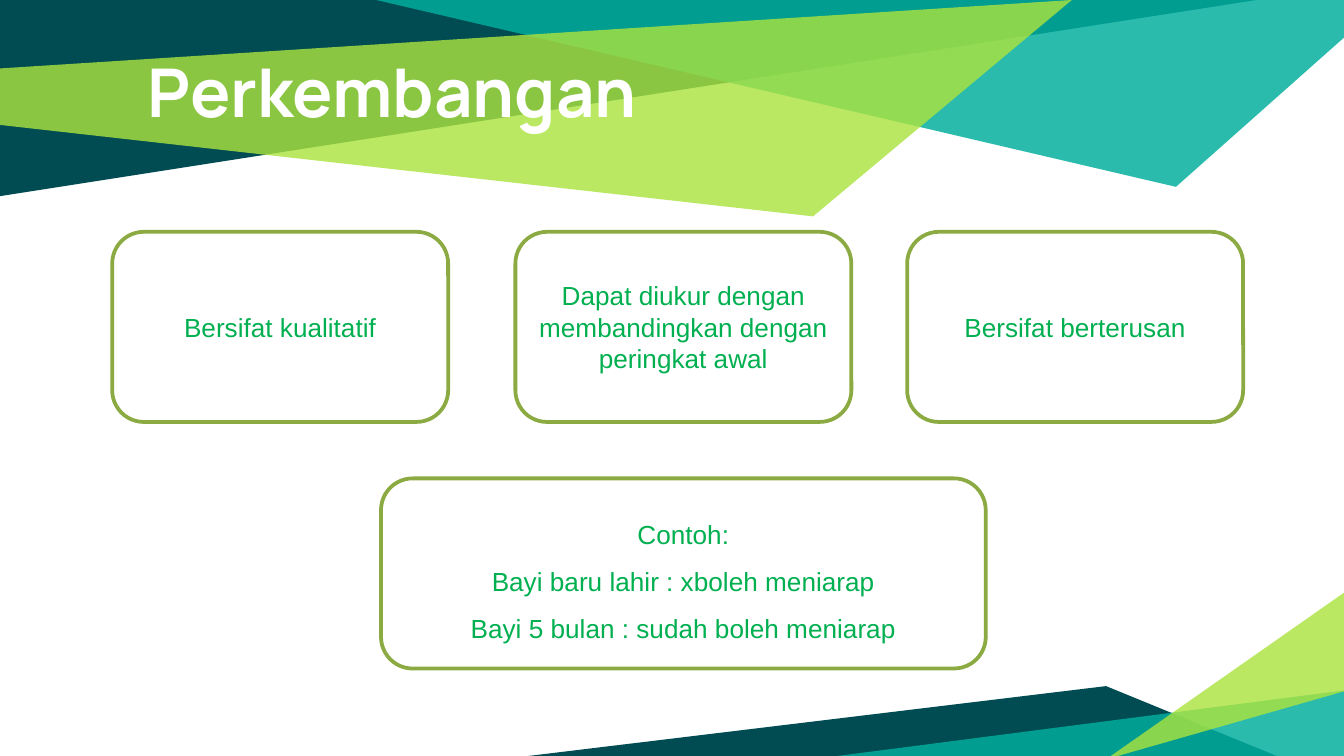
import pptx
import pptx.dml.color
import pptx.enum.shapes
import pptx.enum.text
import pptx.oxml
import pptx.oxml.ns
import pptx.util

PX = 4572  # EMU per px, 200 px to the inch
WIDTH, HEIGHT = 2000, 1125

DARK, TEAL, LIME = "004C52", "00AE9D", "ABE33F"
WHITE, OLIVE, GREEN = "FFFFFF", "8BAB42", "00B050"

BANDS = [
    (DARK, 100, [(0, 0), (0, 292), (1870, 0)]),
    (TEAL, 83, [(560, 0), (1750, 278), (2000, 56), (2000, 0)]),
    (LIME, 81, [(-2, 102), (0, 186), (1210, 322), (1595, 0)]),
    (DARK, 100, [(786, 1125), (1900, 1125), (1646, 1021)]),
    (TEAL, 83, [(2004, 1027), (2004, 1130), (1208, 1130)]),
    (LIME, 81, [(2003, 1028), (2003, 880), (1646, 1130)]),
]

TRAIT_WIDTH, CARD_HEIGHT = 500, 283
TRAITS = [
    (167, "Bersifat kualitatif"),
    (767, "Dapat diukur dengan membandingkan dengan peringkat awal"),
    (1350, "Bersifat berterusan"),
]
EXAMPLE = "Contoh:\nBayi baru lahir : xboleh meniarap\nBayi 5 bulan : sudah boleh meniarap"


def rgb(color):
    return pptx.dml.color.RGBColor.from_string(color)


def emu(*lengths):
    return [pptx.util.Emu(length * PX) for length in lengths]


class SlideBuilder:
    """Holds the slide and its style, and adds each kind of element."""

    heading_font, body_font = "Manrope", "Arial"
    heading_size, body_size = 36, 14

    def __init__(self, slide):
        self.slide = slide

    def format_runs(self, paragraph, font_name, size, color, bold=False):
        for run in paragraph.runs:
            run.font.name = font_name
            run.font.size = pptx.util.Pt(size)
            run.font.bold = bold
            run.font.color.rgb = rgb(color)

    def band(self, color, opacity, corners):
        """Add a flat polygon; opacity is in percent."""
        outline = self.slide.shapes.build_freeform(*corners[0], scale=PX)
        outline.add_line_segments(corners[1:], close=True)
        band = outline.convert_to_shape()
        band.shadow.inherit = False
        band.line.fill.background()
        band.fill.solid()
        band.fill.fore_color.rgb = rgb(color)
        if opacity < 100:
            fill_color = band.element.spPr.find(".//" + pptx.oxml.ns.qn("a:srgbClr"))
            alpha = pptx.oxml.parse_xml(
                f'<a:alpha {pptx.oxml.ns.nsdecls("a")} val="{opacity * 1000}"/>')
            fill_color.append(alpha)

    def title(self, text, left, top, width, height):
        """Fill the title placeholder and bring it in front of what is drawn so far."""
        title = self.slide.shapes.title
        title.element.getparent().append(title.element)
        title.left, title.top, title.width, title.height = emu(left, top, width, height)
        frame = title.text_frame
        frame.text = text
        frame.word_wrap = True
        frame.auto_size = pptx.enum.text.MSO_AUTO_SIZE.NONE
        frame.vertical_anchor = pptx.enum.text.MSO_ANCHOR.MIDDLE
        frame.margin_left, frame.margin_top, frame.margin_right, frame.margin_bottom = emu(
            20, 20, 20, 20)
        heading = frame.paragraphs[0]
        heading.alignment = pptx.enum.text.PP_ALIGN.LEFT
        heading.line_spacing = 0.95
        self.format_runs(heading, self.heading_font, self.heading_size, WHITE, bold=True)

    def card(self, text, left, top, width, height, line_spacing=1.0):
        card = self.slide.shapes.add_shape(
            pptx.enum.shapes.MSO_SHAPE.ROUNDED_RECTANGLE, *emu(left, top, width, height))
        card.shadow.inherit = False
        card.fill.solid()
        card.fill.fore_color.rgb = rgb(WHITE)
        card.line.color.rgb = rgb(OLIVE)
        card.line.width = pptx.util.Pt(2)
        frame = card.text_frame
        frame.text = text
        frame.word_wrap = True
        frame.vertical_anchor = pptx.enum.text.MSO_ANCHOR.MIDDLE
        for paragraph in frame.paragraphs:
            paragraph.alignment = pptx.enum.text.PP_ALIGN.CENTER
            paragraph.line_spacing = line_spacing
            self.format_runs(paragraph, self.body_font, self.body_size, GREEN)


def main():
    deck = pptx.Presentation()
    deck.slide_width, deck.slide_height = emu(WIDTH, HEIGHT)
    title_only = deck.slide_layouts[5]
    builder = SlideBuilder(deck.slides.add_slide(title_only))

    for color, opacity, corners in BANDS:
        builder.band(color, opacity, corners)
    builder.title("Perkembangan", 200, 46, 1612, 188)
    for left, trait in TRAITS:
        builder.card(trait, left, 345, TRAIT_WIDTH, CARD_HEIGHT)
    builder.card(EXAMPLE, 567, 712, 900, CARD_HEIGHT, line_spacing=1.5)

    deck.save("out.pptx")


if __name__ == "__main__":
    main()
